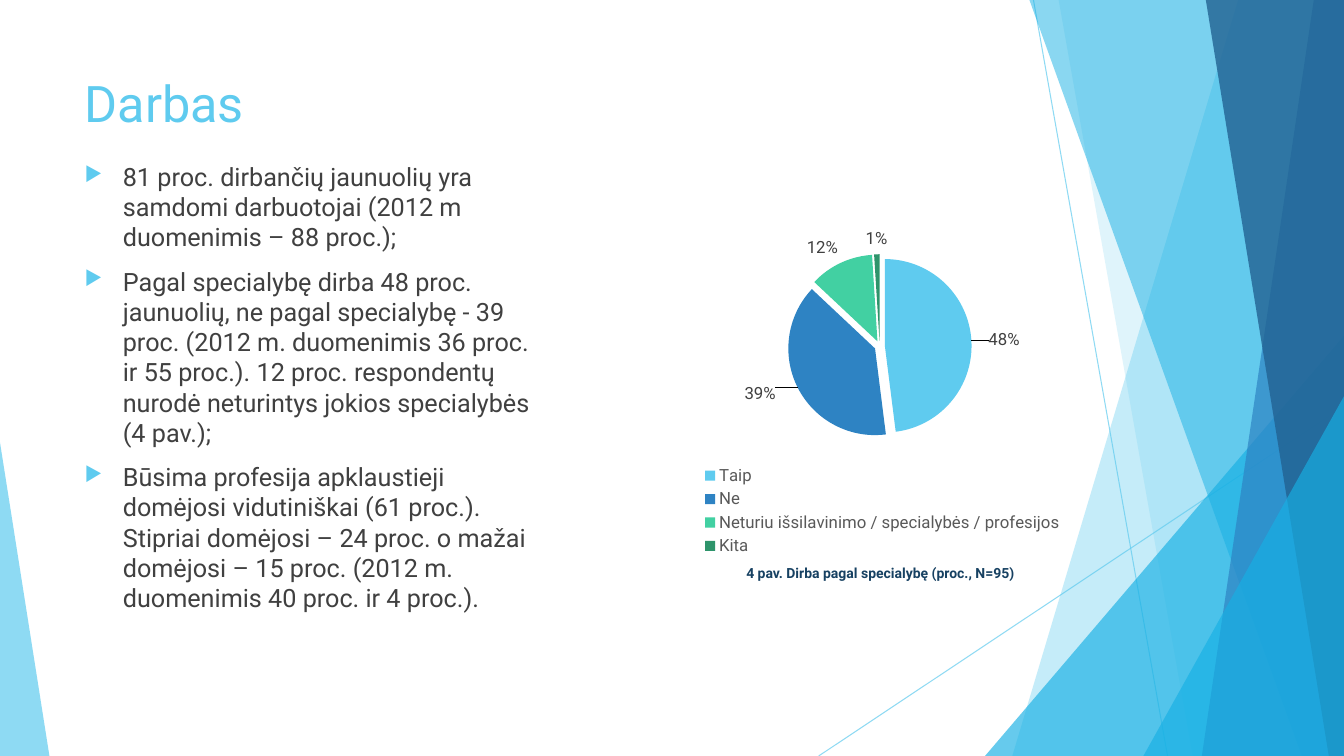
from dataclasses import dataclass

from lxml import etree
from pptx import Presentation
from pptx.chart.data import CategoryChartData
from pptx.dml.color import RGBColor
from pptx.enum.chart import XL_CHART_TYPE, XL_LEGEND_POSITION
from pptx.enum.shapes import MSO_CONNECTOR, MSO_SHAPE
from pptx.enum.text import MSO_ANCHOR, PP_ALIGN
from pptx.oxml import parse_xml
from pptx.oxml.ns import qn
from pptx.util import Inches, Pt

PIE = XL_CHART_TYPE.PIE
BOTTOM = XL_LEGEND_POSITION.BOTTOM
STRAIGHT = MSO_CONNECTOR.STRAIGHT
TRIANGLE = MSO_SHAPE.ISOSCELES_TRIANGLE
TOP = MSO_ANCHOR.TOP
LEFT, CENTER = PP_ALIGN.LEFT, PP_ALIGN.CENTER
CHART_NS = 'xmlns:c="http://schemas.openxmlformats.org/drawingml/2006/chart"'


@dataclass
class Theme:
    font: str = "Roboto"
    sky: str = "5FCBEF"
    cyan: str = "17B0E4"
    blue: str = "2E83C3"
    navy: str = "226292"
    mint: str = "42D0A2"
    green: str = "2E946B"
    text: str = "404040"
    legend: str = "595959"
    caption: str = "174162"
    title_size: int = 36
    body_size: int = 18
    chart_size: int = 12
    caption_size: int = 10


def style(font, size, color, bold=False):
    font.name, font.size, font.bold = theme.font, Pt(size), bold
    font.color.rgb = RGBColor.from_string(color)


def tint(fill, color, opacity):
    fill.solid()
    fill.fore_color.rgb = RGBColor.from_string(color)
    clr = fill._xPr.find(".//" + qn("a:srgbClr"))
    etree.SubElement(clr, qn("a:alpha")).set("val", str(opacity * 1000))


theme = Theme()
prs = Presentation()
prs.slide_width, prs.slide_height = Inches(13.33), Inches(7.5)
s = prs.slides.add_slide(prs.slide_layouts[5])

for x1, y1, x2, y2 in [(10.25, 0, 11.58, 7.5), (13.33, 4.03, 8.12, 7.5)]:
    line = s.shapes.add_connector(STRAIGHT, Inches(x1), Inches(y1), Inches(x2), Inches(y2))
    line.line.width = Pt(0.75)
    tint(line.line.fill, theme.sky, 70)
    etree.SubElement(line._element.spPr, qn("a:effectLst"))

facets = [
    ("band", (12.28, 10.04), theme.sky, 36),
    ("band", (10.5, 11.83), theme.sky, 20),
    ("triangle", (9.77, 3.33, 3.56, 1), theme.cyan, 66),
    ("band", (10.21, 12.91), theme.cyan, 50),
    ("band", (13.03, 11.92), theme.blue, 70),
    ("band", (11.96, 13.18), theme.navy, 80),
    ("triangle", (11.34, 3.93, 1.99, 1), theme.cyan, 66),
    ("triangle", (0, 4.39, 0.49, 0), theme.sky, 70),
]
for kind, geometry, color, opacity in facets:
    if kind == "band":
        top_x, bottom_x = geometry
        fb = s.shapes.build_freeform(Inches(top_x), Inches(0))
        corners = [(13.33, 0), (13.33, 7.5), (bottom_x, 7.5)]
        fb.add_line_segments([(Inches(x), Inches(y)) for x, y in corners], close=True)
        facet = fb.convert_to_shape()
    else:
        x, y, w, apex = geometry
        facet = s.shapes.add_shape(TRIANGLE, Inches(x), Inches(y), Inches(w), Inches(7.5 - y))
        facet.adjustments[0] = apex
    tint(facet.fill, color, opacity)
    facet.line.fill.background()
    facet.shadow.inherit = False

title = s.shapes.title
title.left, title.top = Inches(0.74), Inches(0.67)
title.width, title.height = Inches(9.4), Inches(1.44)
tf = title.text_frame
tf.text = "Darbas"
tf.vertical_anchor = TOP
p = tf.paragraphs[0]
p.alignment = LEFT
style(p.runs[0].font, theme.title_size, theme.sky)

points = [
    "81 proc. dirbančių jaunuolių yra samdomi darbuotojai (2012 m duomenimis – 88 proc.);",
    "Pagal specialybę dirba 48 proc. jaunuolių, ne pagal specialybę - 39 proc. "
    "(2012 m. duomenimis 36 proc. ir 55 proc.). 12 proc. respondentų nurodė "
    "neturintys jokios specialybės (4 pav.);",
    "Būsima profesija apklaustieji domėjosi vidutiniškai (61 proc.). Stipriai domėjosi "
    "– 24 proc. o mažai domėjosi – 15 proc. (2012 m. duomenimis 40 proc. ir 4 proc.).",
]
tf = s.shapes.add_textbox(Inches(0.74), Inches(1.55), Inches(4.65), Inches(5.48)).text_frame
tf.word_wrap = True
tf.text = "\n".join(points)
for p in tf.paragraphs:
    p.space_before = Pt(10)
    style(p.runs[0].font, theme.body_size, theme.text)
    pPr = p._p.get_or_add_pPr()
    pPr.set("marL", str(Inches(0.38)))
    pPr.set("indent", str(-Inches(0.38)))
    bullet_color = etree.SubElement(pPr, qn("a:buClr"))
    etree.SubElement(bullet_color, qn("a:srgbClr")).set("val", theme.sky)
    etree.SubElement(pPr, qn("a:buSzPct")).set("val", "80000")
    etree.SubElement(pPr, qn("a:buChar")).set("char", "▶")

tf = s.shapes.add_textbox(Inches(7.21), Inches(5.55), Inches(3.04), Inches(0.27)).text_frame
tf.word_wrap = False
tf.text = "4 pav. Dirba pagal specialybę (proc., N=95)"
tf.paragraphs[0].alignment = CENTER
style(tf.paragraphs[0].runs[0].font, theme.caption_size, theme.caption, True)

data = CategoryChartData()
data.categories = ["Taip", "Ne", "Neturiu išsilavinimo / specialybės / profesijos", "Kita"]
data.add_series("Series 1", (48, 39, 12, 1))
chart = s.shapes.add_chart(PIE, Inches(5.95), Inches(2.11), Inches(5.55), Inches(3.44), data).chart
chart.has_title = False
style(chart.font, theme.chart_size, theme.text)
chart.has_legend = True
chart.legend.position = BOTTOM
chart.legend.include_in_layout = False
style(chart.legend.font, theme.chart_size, theme.legend)

plot = chart.plots[0]
plot.vary_by_categories = True
series = plot.series[0]
for i, color in enumerate([theme.sky, theme.blue, theme.mint, theme.green]):
    fill = series.points[i].format.fill
    fill.solid()
    fill.fore_color.rgb = RGBColor.from_string(color)
ser = series._element
ser.find(qn("c:tx")).addnext(parse_xml(f'<c:explosion {CHART_NS} val="6"/>'))

shows = "".join(
    f'<c:{name} val="{int(name == "showPercent")}"/>'
    for name in ("showLegendKey", "showVal", "showCatName", "showSerName", "showPercent", "showBubbleSize")
)
label_format = '<c:numFmt formatCode="0%" sourceLinked="0"/>'
moved = "".join(
    f'<c:dLbl><c:idx val="{i}"/><c:layout><c:manualLayout><c:x val="{dx}"/><c:y val="{dy}"/>'
    f'</c:manualLayout></c:layout>{label_format}<c:dLblPos val="outEnd"/>{shows}</c:dLbl>'
    for i, dx, dy in [(0, 0.02, 0), (1, -0.03, -0.02)]
)
ser.find(qn("c:cat")).addprevious(parse_xml(
    f'<c:dLbls {CHART_NS}>{moved}{label_format}<c:dLblPos val="outEnd"/>{shows}'
    '<c:showLeaderLines val="1"/></c:dLbls>'
))

plot_area = chart._chartSpace.chart.plotArea
for old in plot_area.findall(qn("c:layout")):
    plot_area.remove(old)
legend = chart.legend._element
for old in legend.findall(qn("c:layout")):
    legend.remove(old)
for parent, index, target, box in [
    (plot_area, 0, '<c:layoutTarget val="inner"/>', (0.33, 0.12, 0.34, 0.53)),
    (legend, 1, "", (0.17, 0.72, 0.67, 0.28)),
]:
    modes = '<c:xMode val="edge"/><c:yMode val="edge"/>'
    sizes = "".join(f'<c:{k} val="{v}"/>' for k, v in zip("xywh", box))
    parent.insert(index, parse_xml(
        f'<c:layout {CHART_NS}><c:manualLayout>{target}{modes}{sizes}</c:manualLayout></c:layout>'
    ))

prs.save("out.pptx")
